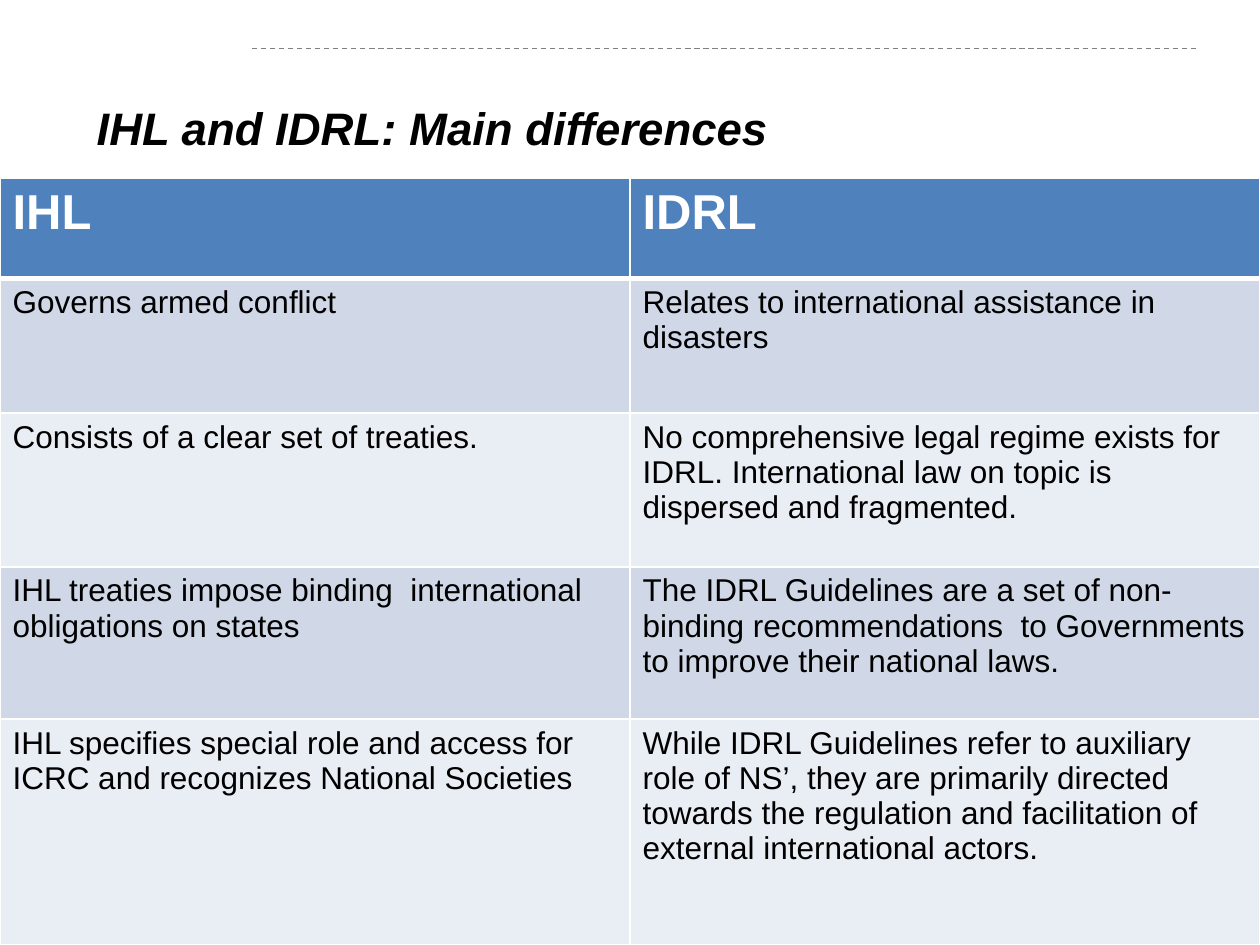
from lxml.etree import SubElement
from pptx import Presentation
from pptx.dml.color import RGBColor
from pptx.enum.dml import MSO_LINE_DASH_STYLE as Dash
from pptx.enum.shapes import MSO_CONNECTOR_TYPE as Connector
from pptx.enum.text import MSO_VERTICAL_ANCHOR as Anchor
from pptx.oxml.ns import qn
from pptx.util import Cm, Pt

BLACK = RGBColor(0x00, 0x00, 0x00)
WHITE = RGBColor(0xFF, 0xFF, 0xFF)
GREY = RGBColor(0x80, 0x80, 0x80)
HEADER_BLUE = RGBColor(0x4F, 0x81, 0xBD)
BAND_DARK = RGBColor(0xD0, 0xD8, 0xE8)
BAND_LIGHT = RGBColor(0xE9, 0xED, 0xF4)

COMPARISON = [
    ("IHL", "IDRL"),
    ("Governs armed conflict",
     "Relates to international assistance in disasters"),
    ("Consists of a clear set of treaties.",
     "No comprehensive legal regime exists for IDRL. International law on "
     "topic is dispersed and fragmented."),
    ("IHL treaties impose binding  international obligations on states",
     "The IDRL Guidelines are a set of non-binding recommendations  to "
     "Governments to improve their national laws."),
    ("IHL specifies special role and access for ICRC and recognizes "
     "National Societies",
     "While IDRL Guidelines refer to auxiliary role of NS’, they are "
     "primarily directed towards the regulation and facilitation of "
     "external international actors."),
]
ROW_HEIGHTS = [2.01, 2.72, 3.1, 3.07, 4.55]


class SlideBuilder:
    title_format = {"size": Pt(26), "bold": True, "italic": True}
    header_format = {"size": Pt(28), "bold": True}
    body_format = {"size": Pt(18), "bold": False}

    def __init__(self, slide):
        self.slide = slide

    def wording(self, frame, words, color, formats):
        run = frame.paragraphs[0].add_run()
        run.text = words
        for name, value in {"name": "Arial", **formats}.items():
            setattr(run.font, name, value)
        run.font.color.rgb = color

    def dashed_rule(self, left, top, right):
        rule = self.slide.shapes.add_connector(
            Connector.STRAIGHT, Cm(left), Cm(top), Cm(right), Cm(top))
        rule.line.color.rgb = GREY
        rule.line.width = Pt(0.75)
        rule.line.dash_style = Dash.DASH
        SubElement(rule.element.spPr, qn("a:effectLst"))

    def title(self, words, left, top, width, height):
        heading = self.slide.shapes.add_textbox(
            Cm(left), Cm(top), Cm(width), Cm(height))
        frame = heading.text_frame
        frame.word_wrap = True
        frame.vertical_anchor = Anchor.MIDDLE
        self.wording(frame, words, BLACK, self.title_format)

    def borders(self, cell, widths):
        properties = cell._tc.get_or_add_tcPr()
        for side, width in widths.items():
            edge = SubElement(properties, qn(f"a:ln{side}"), w=str(Pt(width)))
            fill = SubElement(edge, qn("a:solidFill"))
            SubElement(fill, qn("a:srgbClr"), val=str(WHITE))

    def table(self, rows, heights, left, top, width):
        grid = self.slide.shapes.add_table(
            len(rows), len(rows[0]), Cm(left), Cm(top),
            Cm(width), Cm(sum(heights))).table
        for index, (entries, height) in enumerate(zip(rows, heights)):
            grid.rows[index].height = Cm(height)
            header = index == 0
            band = BAND_DARK if index % 2 else BAND_LIGHT
            for column, words in enumerate(entries):
                cell = grid.cell(index, column)
                self.borders(cell, {"L": 1, "R": 1,
                                    "T": 3 if index == 1 else 1,
                                    "B": 3 if header else 1})
                cell.fill.solid()
                cell.fill.fore_color.rgb = HEADER_BLUE if header else band
                self.wording(cell.text_frame, words,
                             WHITE if header else BLACK,
                             self.header_format if header
                             else self.body_format)


def main():
    deck = Presentation()
    deck.slide_width, deck.slide_height = Cm(25.4), Cm(19.05)
    builder = SlideBuilder(deck.slides.add_slide(deck.slide_layouts[6]))
    builder.dashed_rule(5.08, 0.98, 24.13)
    builder.title("IHL and IDRL: Main differences", 1.7, 0.97, 22.43, 3.18)
    builder.table(COMPARISON, ROW_HEIGHTS, 0, 3.6, 25.4)
    deck.save("out.pptx")


if __name__ == "__main__":
    main()
